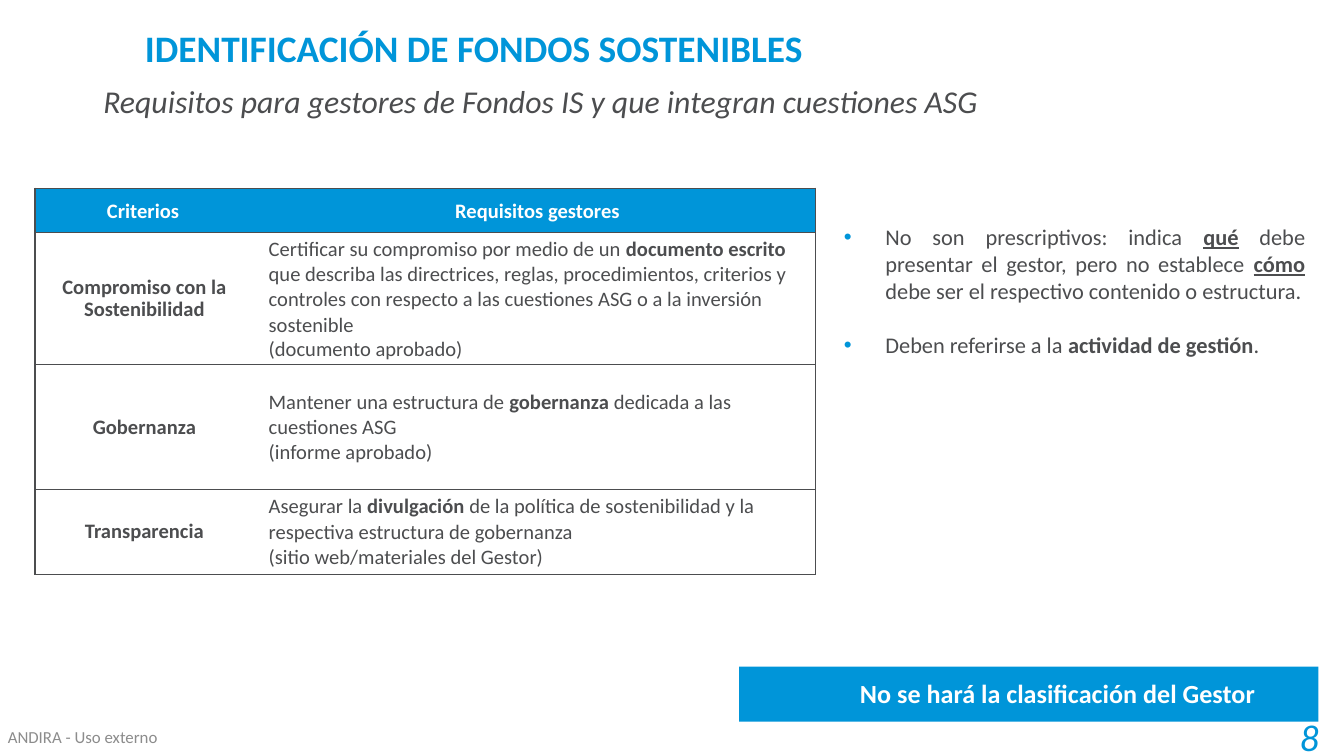
from dataclasses import dataclass

from lxml.etree import SubElement as Sub
from pptx import Presentation
from pptx.dml.color import RGBColor
from pptx.enum.shapes import MSO_SHAPE as Shape
from pptx.enum.text import MSO_ANCHOR as Anchor, PP_ALIGN as Align
from pptx.oxml.ns import qn
from pptx.util import Inches, Pt

BLUE, GRAY, PALE, WHITE = "0095D9", "4C4D4F", "8C8C8C", "FFFFFF"


@dataclass
class Label:
    text: str
    box: tuple
    size: float
    color: str
    bold: bool = False
    italic: bool = False
    align: Align = Align.LEFT
    anchor: Anchor = Anchor.TOP
    gap: float = 1.0


@dataclass
class Row:
    name: str
    lines: list
    high: float
    tight: bool = False


LABELS = [
    Label("IDENTIFICACIÓN DE FONDOS SOSTENIBLES", (0.98, 0.16, 7.01, 0.43),
          20, BLUE, bold=True, anchor=Anchor.MIDDLE, gap=0.9),
    Label("Requisitos para gestores de Fondos IS y que integran cuestiones ASG",
          (0.67, 0.56, 7.01, 0.35), 17, GRAY, italic=True),
    Label("No se hará la clasificación del Gestor", (6.3, 4.99, 3.7, 0.34),
          14, WHITE, bold=True),
    Label("8", (7.39, 5.33, 2.52, 0.3), 20, BLUE, italic=True,
          align=Align.RIGHT, anchor=Anchor.MIDDLE),
    Label("ANDIRA - Uso externo", (-0.04, 5.33, 4.88, 0.3), 9, PALE,
          anchor=Anchor.MIDDLE),
]

# Words between asterisks are bold; a newline is a break within the paragraph.
HEADS = ["Criterios", "Requisitos gestores"]
ROWS = [
    Row("Compromiso con la Sostenibilidad",
        ["Certificar su compromiso por medio de un *documento escrito* que describa "
         "las directrices, reglas, procedimientos, criterios y controles con respecto "
         "a las cuestiones ASG o a la inversión sostenible",
         "(documento aprobado)"], 0.97, tight=True),
    Row("Gobernanza",
        ["Mantener una estructura de *gobernanza* dedicada a las cuestiones ASG",
         "(informe aprobado)"], 0.93),
    Row("Transparencia",
        ["Asegurar la *divulgación* de la política de sostenibilidad y la respectiva "
         "estructura de gobernanza\n(sitio web/materiales del Gestor)"], 0.63),
]


def rgb(code: str) -> RGBColor:
    return RGBColor.from_string(code)


def style(font, size: float, color: str, bold=False, italic=False) -> None:
    font.name, font.size = "Calibri", Pt(size)
    font.bold, font.italic = bold, italic
    font.color.rgb = rgb(color)


def write(para, text: str, size: float, color: str, line=False) -> None:
    """Split text at asterisks into plain and bold runs; line underlines the bold."""
    for i, part in enumerate(text.split("*")):
        for j, piece in enumerate(part.split("\n")):
            if j:
                para.add_line_break()
            if piece:
                run = para.add_run()
                run.text = piece
                style(run.font, size, color, bold=i % 2 == 1)
                run.font.underline = line and i % 2 == 1


def add_box(slide, box: tuple):
    frame = slide.shapes.add_textbox(*map(Inches, box)).text_frame
    frame.word_wrap = True
    return frame


def add_label(slide, label: Label) -> None:
    frame = add_box(slide, label.box)
    frame.vertical_anchor = label.anchor
    frame.text = label.text
    para = frame.paragraphs[0]
    para.alignment, para.line_spacing = label.align, label.gap
    style(para.runs[0].font, label.size, label.color, label.bold, label.italic)


def edge(cell, sides: str) -> None:
    """Draw the named sides of a cell and clear the others."""
    props = cell._tc.get_or_add_tcPr()
    for side in "LRTB":
        line = Sub(props, qn(f"a:ln{side}"), w=str(Pt(0.75)))
        if side in sides:
            fill = Sub(line, qn("a:solidFill"))
            Sub(fill, qn("a:srgbClr"), val=GRAY)
        else:
            Sub(line, qn("a:noFill"))


def pad(cell, left: float, right: float, tall: float) -> None:
    cell.margin_left, cell.margin_right = Inches(left), Inches(right)
    cell.margin_top = cell.margin_bottom = Inches(tall)
    cell.vertical_anchor = Anchor.MIDDLE


def center(cell, text: str, color: str, gap: float, after: float) -> None:
    cell.text = text
    para = cell.text_frame.paragraphs[0]
    para.alignment, para.line_spacing = Align.CENTER, gap
    para.space_after = Pt(after)
    style(para.runs[0].font, 11, color, bold=True)


def add_grid(slide) -> None:
    wide, high = [1.67, 4.14], [0.33] + [row.high for row in ROWS]
    box = (0.26, 1.4, sum(wide), sum(high))
    grid = slide.shapes.add_table(len(high), 2, *map(Inches, box)).table
    grid.horz_banding = False
    for col, size in zip(grid.columns, wide):
        col.width = Inches(size)
    for row, size in zip(grid.rows, high):
        row.height = Inches(size)
        for cell, side in zip(row.cells, "LR"):
            edge(cell, side + "TB")
            cell.fill.background()

    for i, (head, left) in enumerate(zip(HEADS, (0.04, 0.1))):
        cell = grid.cell(0, i)
        pad(cell, left, 0.1, 0.05)
        center(cell, head, WHITE, 1.07, 8)
        cell.fill.solid()
        cell.fill.fore_color.rgb = rgb(BLUE)

    for i, row in enumerate(ROWS, 1):
        name, need = grid.cell(i, 0), grid.cell(i, 1)
        pad(name, 0.03, 0.07, 0.03)
        center(name, row.name, GRAY, 0.9, 10)
        pad(need, 0.07, 0.01, 0.03)
        frame = need.text_frame
        for j, line in enumerate(row.lines):
            para = frame.add_paragraph() if j else frame.paragraphs[0]
            write(para, line, 11, GRAY)
        if row.tight:
            para.line_spacing, para.space_after = 0.9, Pt(10)


def add_notes(slide) -> None:
    frame = add_box(slide, (6.18, 1.61, 3.63, 1.11))
    notes = [
        "No son prescriptivos: indica *qué* debe presentar el gestor, pero no "
        "establece *cómo* debe ser el respectivo contenido o estructura.",
        "Deben referirse a la *actividad de gestión*.",
    ]
    for i, note in enumerate(notes):
        para = frame.add_paragraph() if i else frame.paragraphs[0]
        para.alignment = Align.JUSTIFY
        if i:
            para.space_before = Pt(14.6)
        props = para._p.get_or_add_pPr()
        props.set("marL", str(Inches(0.31)))
        props.set("indent", str(-Inches(0.31)))
        Sub(Sub(props, qn("a:buClr")), qn("a:srgbClr"), val=BLUE)
        Sub(props, qn("a:buFont"), typeface="Arial")
        Sub(props, qn("a:buChar"), char="•")
        write(para, note, 12, GRAY, line=i == 0)


def main() -> None:
    deck = Presentation()
    deck.slide_width, deck.slide_height = Inches(10), Inches(10 * 9 / 16)
    slide = deck.slides.add_slide(deck.slide_layouts[6])
    band = slide.shapes.add_shape(Shape.RECTANGLE, *map(Inches, (5.5, 4.96, 4.31, 0.41)))
    band.shadow.inherit = False
    band.fill.solid()
    band.fill.fore_color.rgb = rgb(BLUE)
    band.line.fill.background()
    add_grid(slide)
    add_notes(slide)
    for label in LABELS:
        add_label(slide, label)
    deck.save("out.pptx")


if __name__ == "__main__":
    main()
